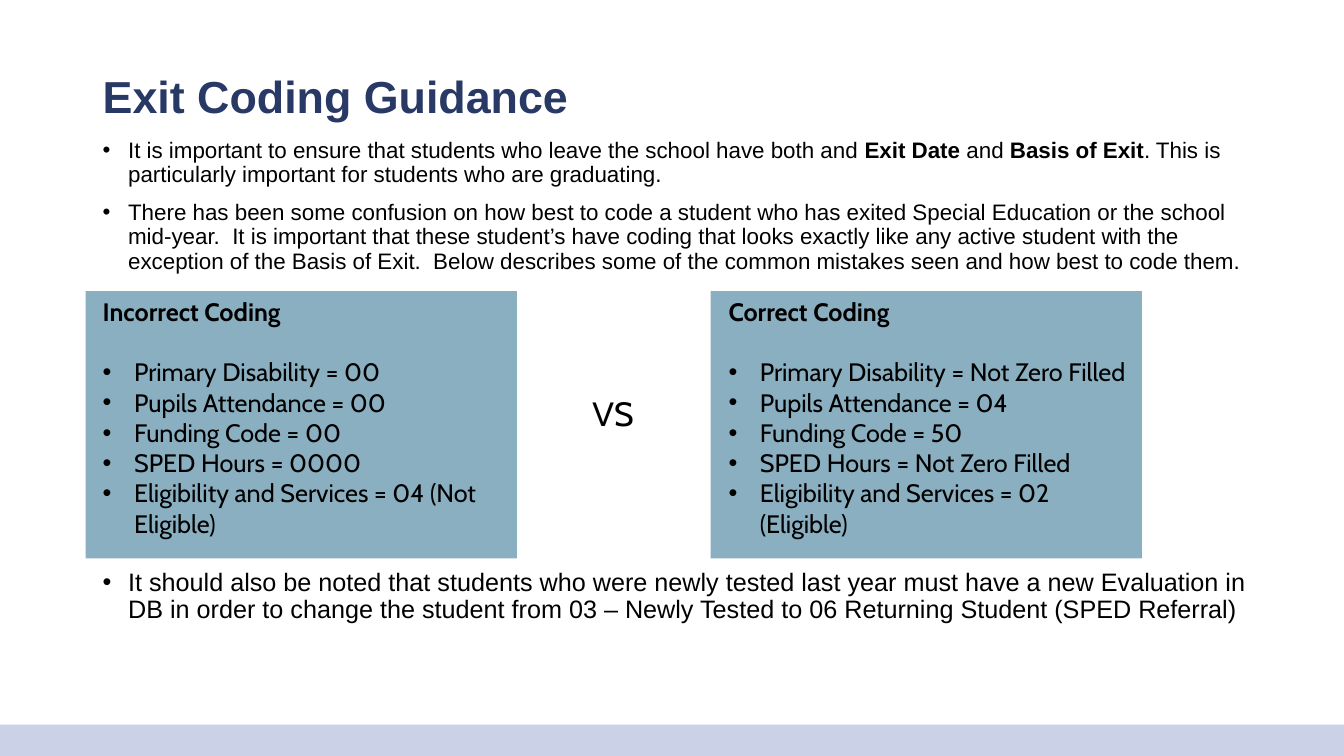
import pptx
import pptx.dml.color
import pptx.enum.shapes
import pptx.enum.text
import pptx.oxml.ns
import pptx.util
from lxml import etree
from pptx.util import Cm

PANEL_TOP = 7.34
PANEL_WIDTH = 10.87
INTRO = [
    [
        ("It is important to ensure that students who leave the school have both and ", False),
        ("Exit Date ", True),
        ("and ", False),
        ("Basis of Exit", True),
        (". This is particularly important for students who are graduating.", False),
    ],
    [
        (
            "There has been some confusion on how best to code a student who has exited "
            "Special Education or the school mid-year.  It is important that these student’s "
            "have coding that looks exactly like any active student with the exception of the "
            "Basis of Exit.  Below describes some of the common mistakes seen and how best to "
            "code them.",
            False,
        )
    ],
]
NOTE = [
    [
        (
            "It should also be noted that students who were newly tested last year must have a "
            "new Evaluation in DB in order to change the student from 03 – Newly Tested to "
            "06 Returning Student (SPED Referral)",
            False,
        )
    ]
]
INCORRECT = [
    "Primary Disability = 00",
    "Pupils Attendance = 00",
    "Funding Code = 00",
    "SPED Hours = 0000",
    "Eligibility and Services = 04 (Not Eligible)",
]
CORRECT = [
    "Primary Disability = Not Zero Filled",
    "Pupils Attendance = 04",
    "Funding Code = 50",
    "SPED Hours = Not Zero Filled",
    "Eligibility and Services = 02  (Eligible)",
]


def color(hex_string):
    return pptx.dml.color.RGBColor.from_string(hex_string)


def add_band(slide, left, top, width, height, fill, opacity=100):
    band = slide.shapes.add_shape(
        pptx.enum.shapes.MSO_SHAPE.RECTANGLE, Cm(left), Cm(top), Cm(width), Cm(height)
    )
    band.shadow.inherit = False
    band.line.fill.background()
    band.fill.solid()
    band.fill.fore_color.rgb = color(fill)
    if opacity < 100:
        tint = band.fill._xPr.find(".//" + pptx.oxml.ns.qn("a:srgbClr"))
        etree.SubElement(tint, pptx.oxml.ns.qn("a:alpha"), val=str(opacity * 1000))


def add_text_frame(slide, left, top, width, height):
    box = slide.shapes.add_textbox(Cm(left), Cm(top), Cm(width), Cm(height))
    box.text_frame.word_wrap = True
    return box.text_frame


def set_font(paragraph, name, size, fill="000000", bold=None):
    paragraph.font.name = name
    paragraph.font.size = pptx.util.Pt(size)
    paragraph.font.color.rgb = color(fill)
    paragraph.font.bold = bold


def set_bullet(paragraph, indent):
    properties = paragraph._p.get_or_add_pPr()
    properties.set("marL", str(Cm(indent)))
    properties.set("indent", str(-Cm(indent)))
    etree.SubElement(properties, pptx.oxml.ns.qn("a:buFont"), typeface="Arial")
    etree.SubElement(properties, pptx.oxml.ns.qn("a:buChar"), char="•")


def next_paragraph(frame, index):
    return frame.add_paragraph() if index else frame.paragraphs[0]


def add_line(slide, text, left, top, width, height, font, size, fill="000000", bold=None):
    frame = add_text_frame(slide, left, top, width, height)
    paragraph = frame.paragraphs[0]
    paragraph.text = text
    set_font(paragraph, font, size, fill, bold)
    return frame


def add_guidance(slide, points, top, height, size):
    frame = add_text_frame(slide, 2.34, top, 29.69, height)
    for index, point in enumerate(points):
        paragraph = next_paragraph(frame, index)
        set_bullet(paragraph, 0.64)
        paragraph.line_spacing = 0.9
        if index:
            paragraph.space_before = pptx.util.Pt(10)
        set_font(paragraph, "Arial", size)
        for text, bold in point:
            run = paragraph.add_run()
            run.text = text
            if bold:
                run.font.bold = True


def add_coding_panel(slide, panel_left, text_left, text_width, heading, codes):
    add_band(slide, panel_left, PANEL_TOP, PANEL_WIDTH, 6.73, "156082", 50)
    frame = add_line(
        slide, heading, text_left, PANEL_TOP, text_width, 6.4, "Cabin", 18, bold=True
    )
    for index, code in enumerate(codes):
        paragraph = frame.add_paragraph()
        paragraph.text = code
        set_bullet(paragraph, 0.79)
        if index == 0:
            paragraph.space_before = pptx.util.Pt(21.6)
        set_font(paragraph, "Cabin", 18)


def main():
    presentation = pptx.Presentation()
    presentation.slide_width = Cm(33.87)
    presentation.slide_height = Cm(19.05)
    slide = presentation.slides.add_slide(presentation.slide_layouts[6])

    title = add_line(
        slide, "Exit Coding Guidance", 2.34, 1.02, 29.21, 2.95, "Arial", 32, "293965", True
    )
    title.vertical_anchor = pptx.enum.text.MSO_ANCHOR.MIDDLE
    title.paragraphs[0].line_spacing = 0.9

    add_guidance(slide, INTRO, 3.38, 3.8, 16)
    add_band(slide, 0, 18.26, 33.87, 0.79, "CBD1E7")
    add_coding_panel(slide, 2.16, 2.34, 10.52, "Incorrect Coding", INCORRECT)
    add_line(slide, "VS", 14.68, 9.78, 1.55, 1.27, "Cabin", 24)
    add_coding_panel(slide, 17.91, 18.11, 10.67, "Correct Coding", CORRECT)
    add_guidance(slide, NOTE, 14.22, 1.6, 18)

    presentation.save("out.pptx")


if __name__ == "__main__":
    main()
